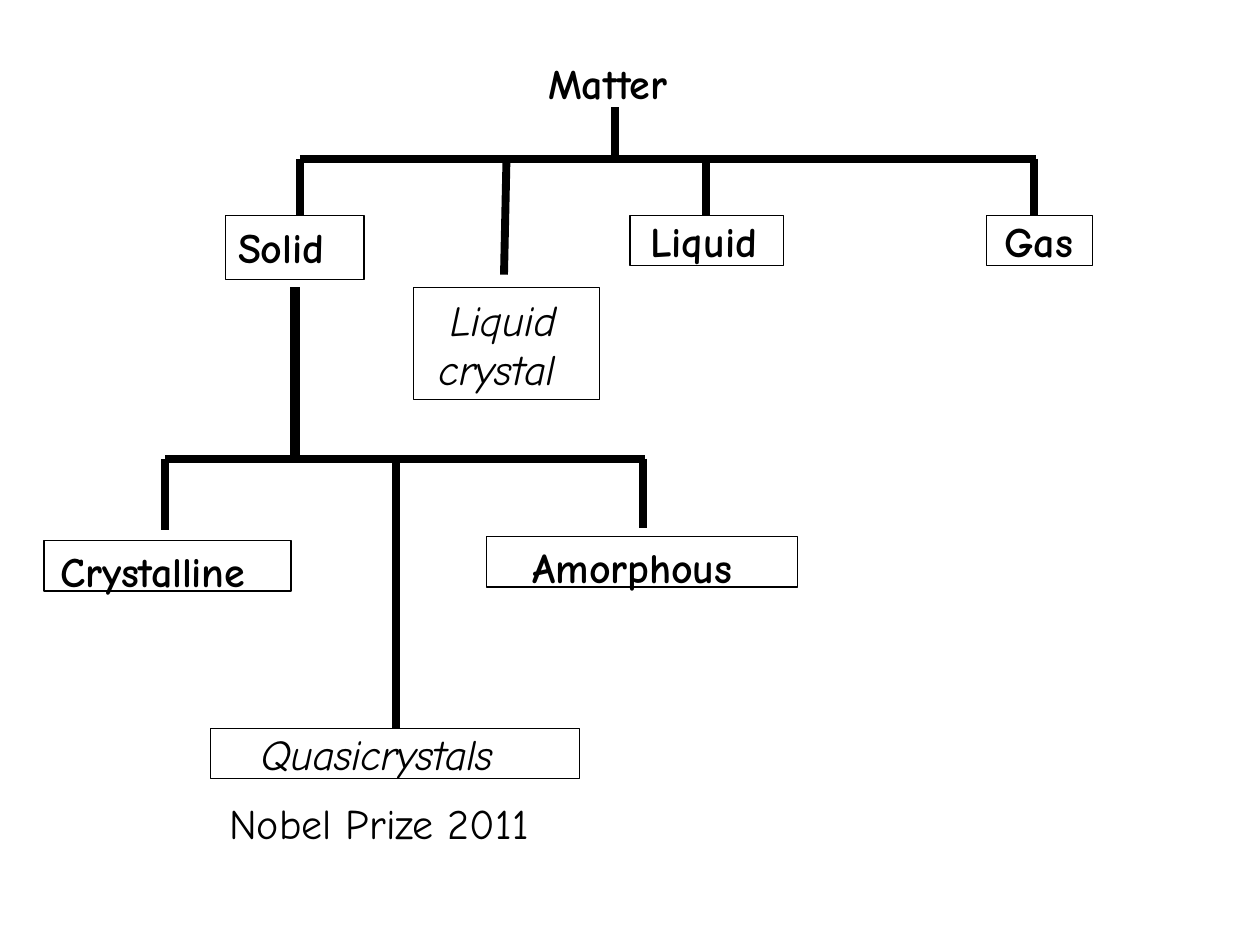
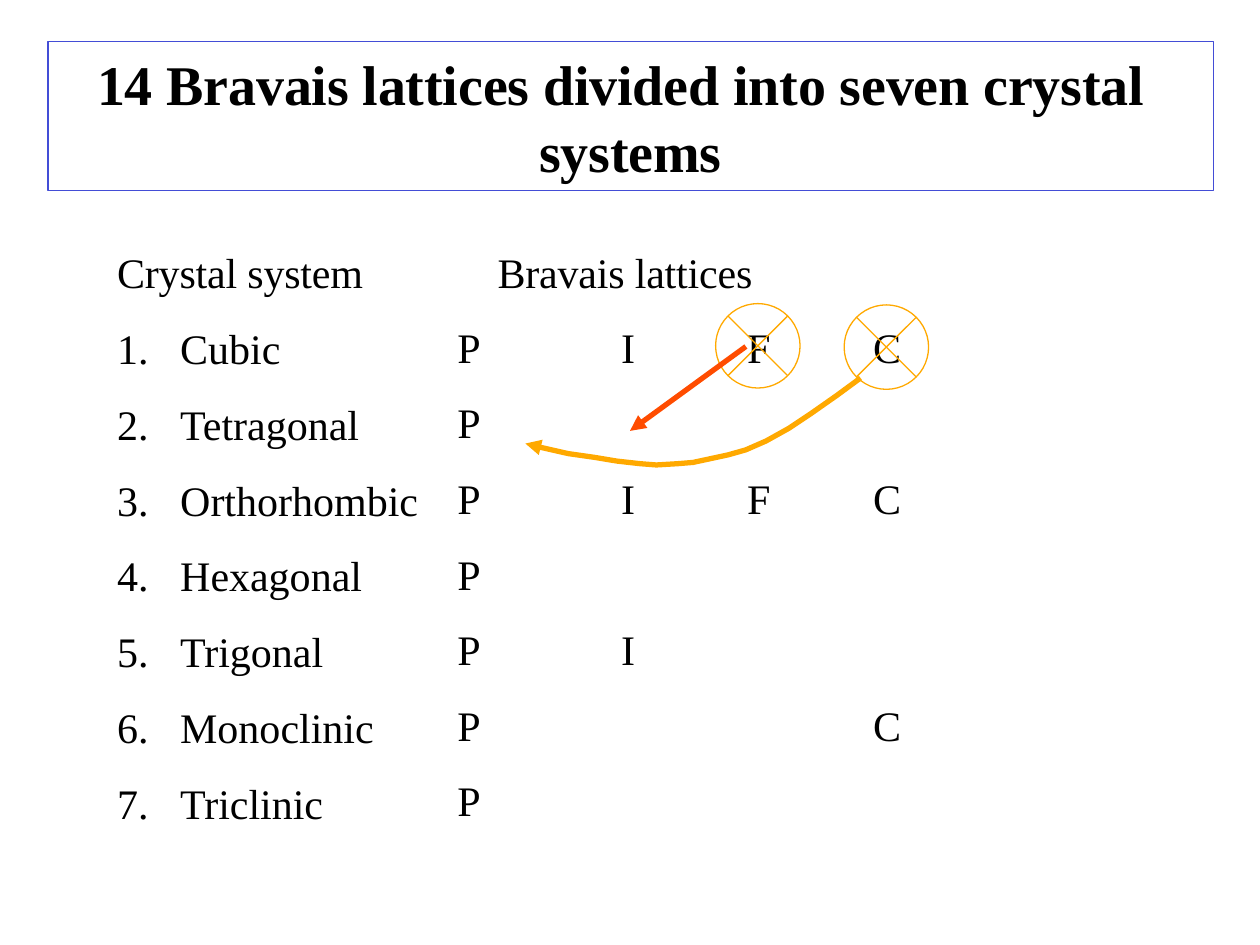
from collections import namedtuple
from pptx import Presentation
from pptx.dml.color import RGBColor
from pptx.enum.shapes import MSO_CONNECTOR as Connector, MSO_SHAPE as Preset
from pptx.enum.text import MSO_ANCHOR as Anchor, MSO_AUTO_SIZE as AutoSize, PP_ALIGN as Align
from pptx.oxml.ns import qn
from pptx.oxml.xmlchemy import OxmlElement
from pptx.util import Inches, Pt

WIDTH, HEIGHT = Inches(10), Inches(7.5)
COLUMNS, ROWS = 100, 75
COLUMN, ROW = WIDTH / COLUMNS, HEIGHT / ROWS

BLACK, BLUE, ORANGE, RED = "000000", "434DD6", "FFA900", "FF4C00"
COMIC, TIMES = "Comic Neue", "Times New Roman"


class Box(namedtuple("Box", "left top width height")):
    def inner(self, left, top, width, height):
        return Box(self.left + left, self.top + top, width, height)

    def point(self, x, y):
        return round((self.left + x) * COLUMN), round((self.top + y) * ROW)

    def emu(self):
        return (*self.point(0, 0), round(self.width * COLUMN), round(self.height * ROW))


PAGE = Box(0, 0, COLUMNS, ROWS)


def color(hex_code):
    return RGBColor.from_string(hex_code)


def write(owner, text, font=TIMES, size=24, bold=False, italic=False, tracking=0,
          left=0, first=0, top=0.1, leading=None, before=0, numbered=False):
    frame = owner.text_frame
    frame.auto_size = AutoSize.NONE
    frame.word_wrap = True
    frame.vertical_anchor = Anchor.TOP
    frame.margin_left = frame.margin_right = frame.margin_bottom = 0
    frame.margin_top = round(top * ROW)
    for index, line in enumerate(text.split("\n")):
        paragraph = frame.paragraphs[0] if index == 0 else frame.add_paragraph()
        paragraph.alignment = Align.LEFT
        paragraph.space_before = Pt(before)
        if leading:
            paragraph.line_spacing = Pt(leading)
        properties = paragraph._p.get_or_add_pPr()
        properties.set("marL", str(round(left * COLUMN)))
        properties.set("indent", str(round(first * COLUMN)))
        if numbered:
            number = OxmlElement("a:buAutoNum")
            number.set("type", "arabicPeriod")
            properties.append(number)
        run = paragraph.add_run()
        run.text = line
        run.font.name, run.font.size = font, Pt(size)
        run.font.bold, run.font.italic = bold, italic
        run.font.color.rgb = color(BLACK)
        if tracking:
            run._r.get_or_add_rPr().set("spc", str(round(tracking * 100)))


def place(placeholder, box):
    placeholder.left, placeholder.top, placeholder.width, placeholder.height = box.emu()
    return placeholder


def label(slide, box, text, **style):
    write(slide.shapes.add_textbox(*box.emu()), text, **style)


def stroke(outlined, hex_code, weight):
    outlined.line.color.rgb = color(hex_code)
    outlined.line.width = Pt(weight)


def outline(slide, preset, box, hex_code):
    figure = slide.shapes.add_shape(preset, *box.emu())
    figure.shadow.inherit = False
    figure.fill.background()
    stroke(figure, hex_code, 0.75)
    return figure


def rule(slide, start, end, hex_code=BLACK, weight=4.5):
    connector = slide.shapes.add_connector(Connector.STRAIGHT, *start, *end)
    stroke(connector, hex_code, weight)
    connector._element.spPr.append(OxmlElement("a:effectLst"))
    return connector


def point_arrow(arrow):
    tip = OxmlElement("a:tailEnd")
    tip.set("type", "triangle")
    arrow._element.spPr.find(qn("a:ln")).append(tip)


def draw_branches(slide, box, stem, drops, stem_weight=4.5):
    stem_x, stem_length = stem
    rule(slide, box.point(stem_x, -stem_length), box.point(stem_x, 0), weight=stem_weight)
    rule(slide, box.point(0, 0), box.point(box.width, 0))
    for x, foot_x, length in drops:
        rule(slide, box.point(x, 0), box.point(foot_x, length))


def draw_states(slide, box, states):
    for text, position, style in states:
        state = outline(slide, Preset.RECTANGLE, box.inner(*position), BLACK)
        write(state, text, font=COMIC, **style)


def build_matter_slide(deck):
    slide = deck.slides.add_slide(deck.slide_layouts[5])
    write(place(slide.shapes.title, PAGE.inner(43.4, 4.5, 11.7, 4.3)), "Matter",
          font=COMIC, bold=True, left=0.1)

    strong = dict(bold=True, tracking=-0.1)
    short = dict(bold=True, top=0.5, leading=25.5)
    slanted = dict(italic=True, size=24.5)
    draw_states(slide, PAGE.inner(0, 17.1, COLUMNS, 15), [
        ("Solid", (17.9, 0, 11, 5.1), dict(strong, left=1, top=0.5)),
        ("Liquid", (50, 0, 12.2, 4), dict(short, left=1.6)),
        ("Gas", (78.3, 0, 8.4, 4), dict(short, left=1.4)),
        ("Liquid crystal", (32.8, 5.7, 14.8, 8.9),
         dict(slanted, left=2, first=0.9, top=0.7, leading=28, tracking=-0.2)),
    ])
    draw_states(slide, PAGE.inner(0, 42.6, COLUMNS, 20), [
        ("Crystalline", (3.5, 0.3, 19.6, 4), dict(strong, left=1.3, top=0.4)),
        ("Amorphous", (38.6, 0, 24.7, 4), dict(strong, left=3.7, top=0.4)),
        ("Quasicrystals", (16.7, 15.2, 29.3, 4),
         dict(slanted, left=4, top=0.4, leading=26, tracking=-0.3)),
    ])
    draw_branches(slide, PAGE.inner(23.8, 12.6, 58.4, 4.5), (25, 4.1),
                  [(0, 0, 4.5), (16.4, 16.2, 9.2), (32.2, 32.2, 4.5), (58.3, 58.3, 4.5)])
    draw_branches(slide, PAGE.inner(13.1, 36.4, 38.1, 21.4), (10.3, 13.6),
                  [(0, 0, 5.7), (18.3, 18.3, 21.4), (37.9, 37.9, 5.5)], stem_weight=5.75)
    label(slide, PAGE.inner(18.1, 63.2, 26.4, 4.3), "Nobel Prize 2011", font=COMIC, left=0.1)


SYSTEMS = [
    ("Cubic", "PIFC"), ("Tetragonal", "P"), ("Orthorhombic", "PIFC"), ("Hexagonal", "P"),
    ("Trigonal", "PI"), ("Monoclinic", "PC"), ("Triclinic", "P"),
]
LATTICE_COLUMNS = {"P": 27, "I": 40, "F": 50, "C": 60}
SYSTEM_PITCH = 6


def draw_systems(slide, box):
    label(slide, box.inner(0, 0, 25, 4.3), "Crystal system", left=0.1, tracking=-0.1)
    label(slide, box.inner(30.2, 0, 25, 4.3), "Bravais lattices", left=0.1, tracking=-0.1)
    names = place(slide.placeholders[1], box.inner(0, 3.8, 26.5, 42.5))
    write(names, "\n".join(name for name, _ in SYSTEMS),
          left=5.1, first=-5, top=2.3, before=14.5, numbered=True)
    for row, (_, lattices) in enumerate(SYSTEMS):
        for lattice in lattices:
            cell = box.inner(LATTICE_COLUMNS[lattice], 5.9 + row * SYSTEM_PITCH, 3, 4.3)
            label(slide, cell, lattice, left=0.1)


def draw_reductions(slide, box):
    for left, top in ((15.1, 0), (25.3, 0.1)):
        outline(slide, Preset.FLOWCHART_SUMMING_JUNCTION, box.inner(left, top, 6.7, 6.7), ORANGE)
    point_arrow(rule(slide, box.point(17.5, 3.4), box.point(8.3, 10.1), RED, 3))

    bend = [(26.6, 5.9), (24.7, 7.3), (22.7, 8.7), (20.9, 9.9), (19.1, 10.9), (17.5, 11.6),
            (16.1, 12), (13.3, 12.6), (12.1, 12.7), (10.4, 12.8), (9.1, 12.7), (7.3, 12.5),
            (5.5, 12.2), (3.4, 11.9), (1.2, 11.4), (0, 11.1)]
    start, *rest = (box.point(x, y) for x, y in bend)
    builder = slide.shapes.build_freeform(*start)
    builder.add_line_segments(rest, close=False)
    sweep = builder.convert_to_shape()
    sweep.shadow.inherit = False
    sweep.fill.background()
    stroke(sweep, ORANGE, 3)
    point_arrow(sweep)


def build_lattice_slide(deck):
    slide = deck.slides.add_slide(deck.slide_layouts[1])
    heading = place(slide.shapes.title, PAGE.inner(3.8, 3.3, 92.5, 11.8))
    stroke(heading, BLUE, 0.75)
    write(heading, "14 Bravais lattices divided into seven crystal systems", size=32,
          bold=True, tracking=-0.1, left=39, first=-35.1, top=0.7, leading=38)
    draw_systems(slide, PAGE.inner(9.2, 19.5, 64, 47))
    draw_reductions(slide, PAGE.inner(41.7, 24.1, 32, 13))


def main():
    deck = Presentation()
    deck.slide_width, deck.slide_height = WIDTH, HEIGHT
    build_matter_slide(deck)
    build_lattice_slide(deck)
    deck.save("out.pptx")


if __name__ == "__main__":
    main()
